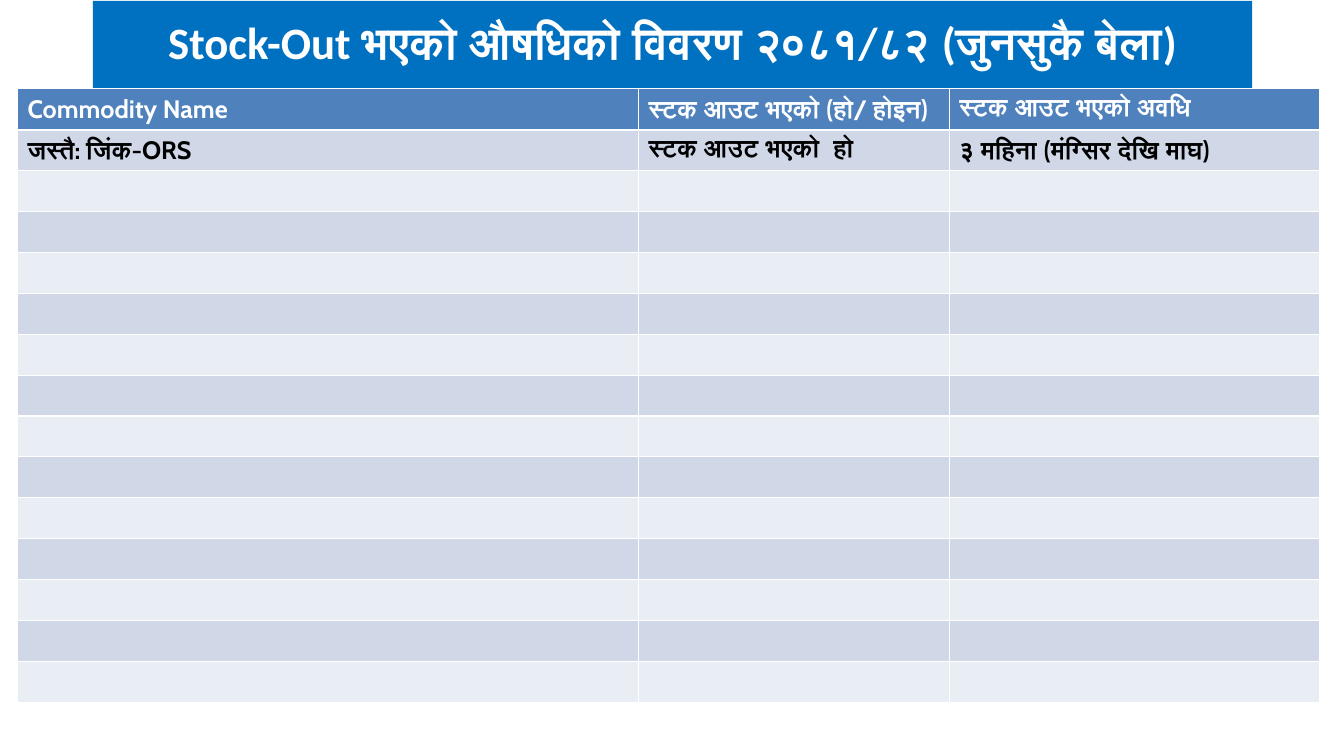
from pptx import Presentation
from pptx.dml.color import RGBColor
from pptx.enum.text import MSO_ANCHOR, PP_ALIGN
from pptx.oxml import parse_xml
from pptx.oxml.ns import nsdecls
from pptx.util import Pt


def write(tf, text, size=18, font="Cabin", color="000000", align=PP_ALIGN.LEFT):
    p = tf.paragraphs[0]
    p.alignment = align
    r = p.add_run()
    r.text = text
    r.font.size = Pt(size)
    r.font.name = font
    r.font.bold = True
    r.font.color.rgb = RGBColor.from_string(color)
    return p


def fill(obj, color):
    obj.fill.solid()
    obj.fill.fore_color.rgb = RGBColor.from_string(color)


prs = Presentation()
prs.slide_width, prs.slide_height = Pt(960), Pt(540)
s = prs.slides.add_slide(prs.slide_layouts[5])

# Title banner
title = s.shapes.title
title.left, title.top, title.width, title.height = Pt(66.4), Pt(0.6), Pt(828), Pt(62.6)
fill(title, "0070C0")
tf = title.text_frame
tf.word_wrap = True
tf.vertical_anchor = MSO_ANCHOR.MIDDLE
p = write(tf, "Stock-Out भएको औषधिको विवरण २०८१/८२ (जुनसुकै बेला)",
          size=32, font="Calibri", color="FFFFFF", align=PP_ALIGN.CENTER)
p.line_spacing = 0.9

# Stock-out table: header, one example, blank rows to fill in
rows = [
    ["Commodity Name", "स्टक आउट भएको (हो/ होइन)", "स्टक आउट भएको अवधि"],
    ["जस्तै: जिंक-ORS", "स्टक आउट भएको  हो", "३ महिना (मंग्सिर देखि माघ)"],
] + [[""] * 3] * 13
col_widths = [443.6, 222, 264.6]
header_height, row_height = 29.5, 28.65

table = s.shapes.add_table(len(rows), len(col_widths), Pt(12.5), Pt(63.3),
                           Pt(sum(col_widths)), Pt(430.6)).table
for col, width in zip(table.columns, col_widths):
    col.width = Pt(width)

for i, row in enumerate(rows):
    table.rows[i].height = Pt(row_height if i else header_height)
    for j, text in enumerate(row):
        cell = table.cell(i, j)
        cell.vertical_anchor = MSO_ANCHOR.MIDDLE
        if text:
            write(cell.text_frame, text, color="000000" if i else "FFFFFF")

        # White borders, thicker below the header; they precede the fill
        heavy_side = {0: "B", 1: "T"}.get(i)
        for side in "LRTB":
            width = Pt(1.5 if side == heavy_side else 1)
            cell._tc.get_or_add_tcPr().append(parse_xml(
                f'<a:ln{side} {nsdecls("a")} w="{width}"><a:solidFill>'
                f'<a:srgbClr val="FFFFFF"/></a:solidFill></a:ln{side}>'))
        fill(cell, "4F81BD" if i == 0 else "D0D8E8" if i % 2 else "E9EDF4")

prs.save("out.pptx")
